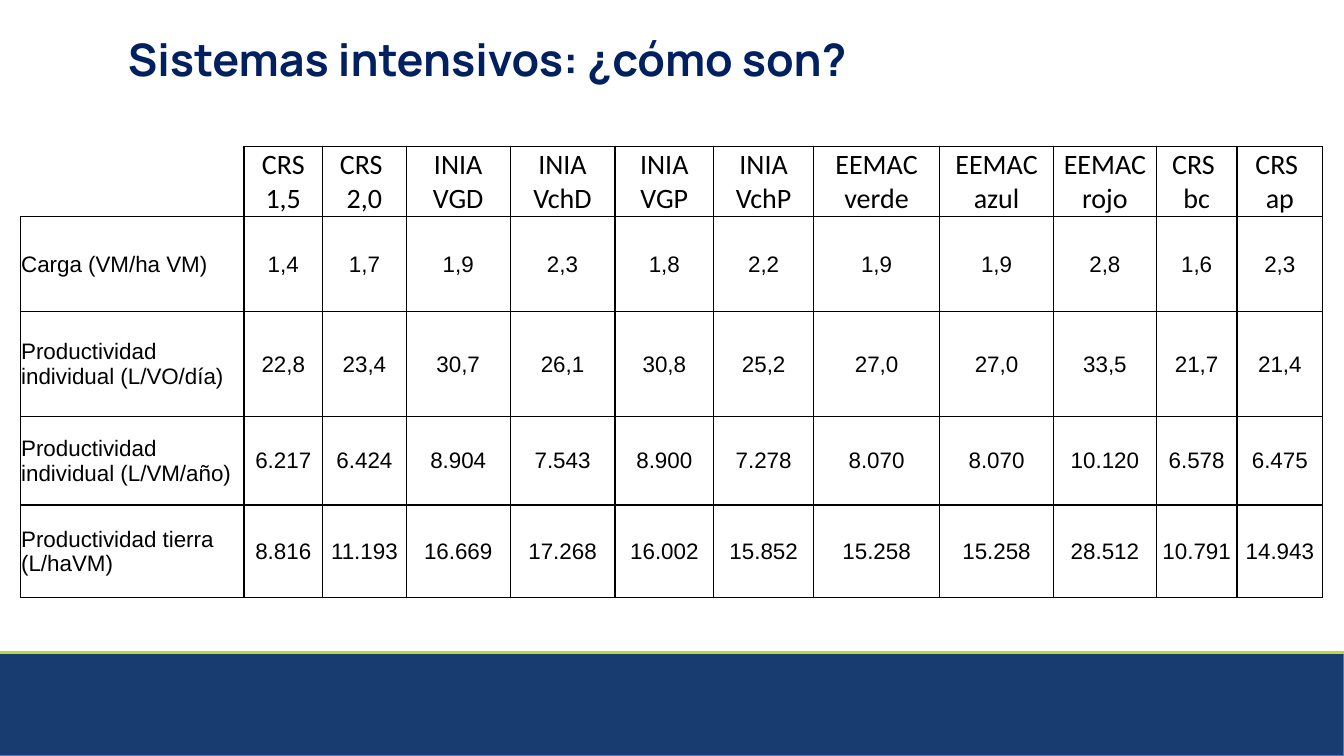
from lxml import etree
from pptx import Presentation
from pptx.dml.color import RGBColor
from pptx.enum.shapes import MSO_CONNECTOR, MSO_SHAPE
from pptx.enum.text import MSO_ANCHOR, PP_ALIGN
from pptx.oxml.ns import qn
from pptx.util import Pt

PX = 9144
RECTANGLE = MSO_SHAPE.RECTANGLE
STRAIGHT = MSO_CONNECTOR.STRAIGHT
LEFT, CENTER = PP_ALIGN.LEFT, PP_ALIGN.CENTER
TOP, MIDDLE = MSO_ANCHOR.TOP, MSO_ANCHOR.MIDDLE

COLORS = {
    "title": "002060",
    "text": "000000",
    "grid": "000000",
    "band": "183C70",
    "band_edge": "4B7EBC",
    "accent": "BDD83C",
}

COLUMN_WIDTHS = [222, 78, 83, 103, 104, 98, 99, 125, 113, 102, 80, 85]
ROW_HEIGHTS = [70, 94, 104, 88, 92]
ROWS = [
    ["", "CRS 1,5", "CRS \n2,0", "INIA VGD", "INIA VchD", "INIA VGP", "INIA VchP",
     "EEMAC verde", "EEMAC azul", "EEMAC rojo", "CRS \nbc", "CRS \nap"],
    ["Carga (VM/ha VM)", "1,4", "1,7", "1,9", "2,3", "1,8", "2,2",
     "1,9", "1,9", "2,8", "1,6", "2,3"],
    ["Productividad individual (L/VO/día)", "22,8", "23,4", "30,7", "26,1", "30,8", "25,2",
     "27,0", "27,0", "33,5", "21,7", "21,4"],
    ["Productividad individual (L/VM/año)", "6.217", "6.424", "8.904", "7.543", "8.900", "7.278",
     "8.070", "8.070", "10.120", "6.578", "6.475"],
    ["Productividad tierra (L/haVM)", "8.816", "11.193", "16.669", "17.268", "16.002", "15.852",
     "15.258", "15.258", "28.512", "10.791", "14.943"],
]


class SlideBuilder:
    def __init__(self, slide, colors):
        self.slide = slide
        self.colors = colors

    def color(self, name):
        return RGBColor.from_string(self.colors[name])

    def add_run(self, paragraph, text, font, size, color, align=LEFT, bold=False):
        paragraph.alignment = align
        run = paragraph.add_run()
        run.text = text
        run.font.name = font
        run.font.size = Pt(size)
        run.font.bold = bold
        run.font.color.rgb = self.color(color)

    def text(self, x, y, width, height, text, font, size, color, bold=False):
        shape = self.slide.shapes.add_textbox(x * PX, y * PX, width * PX, height * PX)
        frame = shape.text_frame
        frame.word_wrap = True
        frame.vertical_anchor = TOP
        self.add_run(frame.paragraphs[0], text, font, size, color, bold=bold)

    def rectangle(self, x, y, width, height, fill, edge, edge_width):
        shape = self.slide.shapes.add_shape(
            RECTANGLE, x * PX, y * PX, width * PX, height * PX)
        shape.shadow.inherit = False
        shape.fill.solid()
        shape.fill.fore_color.rgb = self.color(fill)
        shape.line.color.rgb = self.color(edge)
        shape.line.width = Pt(edge_width)

    def line(self, x1, y1, x2, y2, color, width):
        connector = self.slide.shapes.add_connector(
            STRAIGHT, x1 * PX, y1 * PX, x2 * PX, y2 * PX)
        connector.line.color.rgb = self.color(color)
        connector.line.width = Pt(width)
        etree.SubElement(connector._element.spPr, qn("a:effectLst"))

    def borders(self, cell, visible, color, width):
        properties = cell._tc.get_or_add_tcPr()
        for index, side in enumerate("LRTB"):
            border = etree.Element(qn(f"a:ln{side}"), w=str(Pt(width)))
            if side in visible:
                fill = etree.SubElement(border, qn("a:solidFill"))
                etree.SubElement(fill, qn("a:srgbClr"), val=self.colors[color])
            else:
                etree.SubElement(border, qn("a:noFill"))
            properties.insert(index, border)

    def cell(self, cell, text, font, size, align):
        cell.margin_left = cell.margin_right = cell.margin_top = PX
        cell.margin_bottom = 0
        cell.vertical_anchor = MIDDLE
        cell.fill.background()
        if not text:
            return
        frame = cell.text_frame
        for index, part in enumerate(text.split("\n")):
            paragraph = frame.add_paragraph() if index else frame.paragraphs[0]
            self.add_run(paragraph, part, font, size, "text", align)

    def table(self, x, y, rows, widths, heights):
        table = self.slide.shapes.add_table(
            len(rows), len(widths), x * PX, y * PX,
            sum(widths) * PX, sum(heights) * PX).table
        table.first_row = False
        table.horz_banding = False
        for column, width in zip(table.columns, widths):
            column.width = width * PX
        for row, height in zip(table.rows, heights):
            row.height = height * PX
        for row_index, values in enumerate(rows):
            font, size = ("Arial", 16) if row_index else ("Calibri", 20)
            for column_index, value in enumerate(values):
                cell = table.cell(row_index, column_index)
                self.cell(cell, value, font, size, CENTER if column_index else LEFT)
                self.borders(cell, "LRTB" if value else "RB", "grid", 1)


def main():
    presentation = Presentation()
    presentation.slide_width = 1333 * PX
    presentation.slide_height = 750 * PX
    slide = presentation.slides.add_slide(presentation.slide_layouts[6])
    builder = SlideBuilder(slide, COLORS)
    builder.table(20, 145, ROWS, COLUMN_WIDTHS, ROW_HEIGHTS)
    builder.rectangle(0, 647, 1333, 103, "band", "band_edge", 0.75)
    builder.line(0, 647, 1333, 647, "accent", 2)
    builder.text(117, 27, 1150, 72, "Sistemas intensivos: ¿cómo son?",
                 "Manrope", 32, "title", bold=True)
    presentation.save("out.pptx")


if __name__ == "__main__":
    main()
